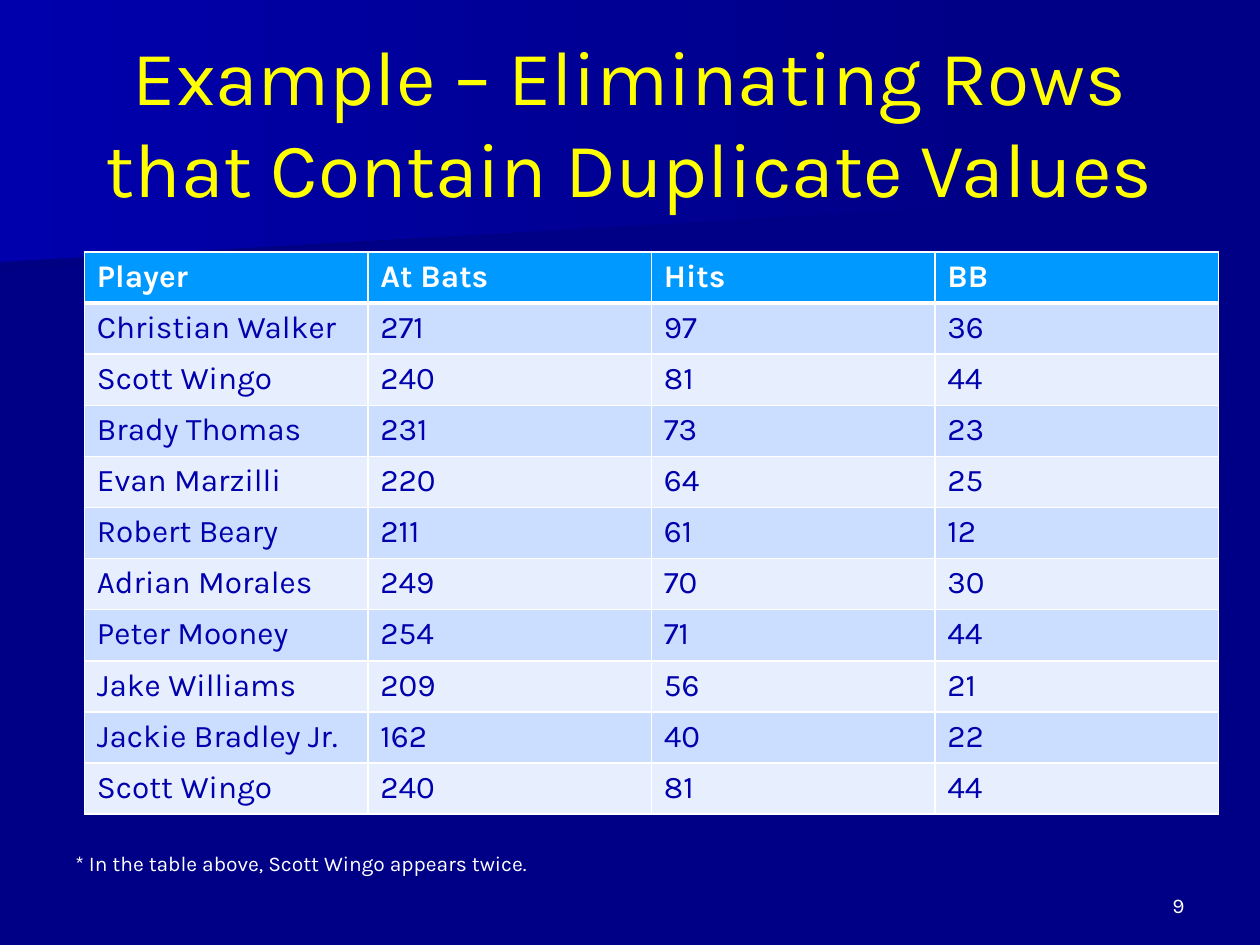
from lxml import etree
from pptx import Presentation
from pptx.dml.color import RGBColor
from pptx.enum.text import MSO_ANCHOR, PP_ALIGN
from pptx.oxml.ns import qn
from pptx.util import Cm, Pt

LEFT, CENTER, RIGHT = PP_ALIGN.LEFT, PP_ALIGN.CENTER, PP_ALIGN.RIGHT
MIDDLE, BOTTOM = MSO_ANCHOR.MIDDLE, MSO_ANCHOR.BOTTOM

FONT = "Karla"
COLORS = {
    "background": "000086",
    "shade": "000083",
    "glow": "0000AC",
    "title": "FFFF00",
    "white": "FFFFFF",
    "header": "0099FF",
    "odd_row": "CBDEFF",
    "even_row": "E7EFFF",
    "body": "0000AC",
}

PLAYERS = [
    ("Player", "At Bats", "Hits", "BB"),
    ("Christian Walker", 271, 97, 36),
    ("Scott Wingo", 240, 81, 44),
    ("Brady Thomas", 231, 73, 23),
    ("Evan Marzilli", 220, 64, 25),
    ("Robert Beary", 211, 61, 12),
    ("Adrian Morales", 249, 70, 30),
    ("Peter Mooney", 254, 71, 44),
    ("Jake Williams", 209, 56, 21),
    ("Jackie Bradley Jr.", 162, 40, 22),
    ("Scott Wingo", 240, 81, 44),
]


def rgb(name):
    return RGBColor.from_string(COLORS[name])


def style_font(para, size, color, bold=False):
    para.font.name = FONT
    para.font.size = Pt(size)
    para.font.bold = bold
    para.font.color.rgb = rgb(color)


def add_text(page, box, text, size, color, align, anchor):
    frame = page.shapes.add_textbox(*map(Cm, box)).text_frame
    frame.word_wrap = True
    frame.vertical_anchor = anchor
    para = frame.paragraphs[0]
    para.text = text
    para.alignment = align
    style_font(para, size, color)


def add_band(page, box, left_drop, right_drop, start_color):
    """Sloping band: the drops are the lower ends of its sides, from the box top."""
    left, top, width, _ = box
    corners = [(left, top), (left + width, top),
               (left + width, top + right_drop), (left, top + left_drop)]
    points = [(Cm(x), Cm(y)) for x, y in corners]
    builder = page.shapes.build_freeform(*points[0])
    builder.add_line_segments(points[1:], close=True)
    band = builder.convert_to_shape()
    band.shadow.inherit = False
    band.line.fill.background()
    band.fill.gradient()
    band.fill.gradient_angle = 0
    for stop, color, position in zip(band.fill.gradient_stops,
                                     (start_color, "background"), (0, 1)):
        stop.color.rgb = rgb(color)
        stop.position = position


def add_backdrop(page):
    page.background.fill.solid()
    page.background.fill.fore_color.rgb = rgb("background")
    add_band(page, (0, 2.57, 19.79, 2.92), 2.92, 1.32, "shade")
    add_band(page, (0, 0, 20.12, 5.28), 5.28, 4.11, "glow")


def set_borders(cell, widths):
    properties = cell._tc.get_or_add_tcPr()
    for side, width in widths.items():
        line = etree.SubElement(properties, qn(f"a:ln{side}"), w=str(Pt(width)))
        fill = etree.SubElement(line, qn("a:solidFill"))
        etree.SubElement(fill, qn("a:srgbClr"), val=COLORS["white"])


def add_player_table(page, box, rows):
    left, top, width, height = box
    columns = len(rows[0])
    table = page.shapes.add_table(len(rows), columns, *map(Cm, box)).table
    for column in table.columns:
        column.width = Cm(width / columns)
    for index, values in enumerate(rows):
        table.rows[index].height = Cm(height / len(rows))
        is_header = index == 0
        fill = "header" if is_header else "odd_row" if index % 2 else "even_row"
        # A thick rule parts the header from the body
        widths = {"L": 1, "R": 1, "T": 3 if index == 1 else 1,
                  "B": 3 if is_header else 1}
        for cell, value in zip(table.rows[index].cells, values):
            set_borders(cell, widths)
            cell.fill.solid()
            cell.fill.fore_color.rgb = rgb(fill)
            para = cell.text_frame.paragraphs[0]
            para.text = str(value)
            style_font(para, 18, "white" if is_header else "body", is_header)


def main():
    deck = Presentation()
    deck.slide_width, deck.slide_height = Cm(25.4), Cm(19.05)
    page = deck.slides.add_slide(deck.slide_layouts[6])

    add_backdrop(page)
    add_text(page, (1.27, 0.84, 22.86, 3.18),
             "Example – Eliminating Rows that Contain Duplicate Values",
             44, "title", CENTER, MIDDLE)
    add_player_table(page, (1.7, 5.08, 22.86, 11.33), PLAYERS)

    # Page number and footnote
    add_text(page, (18.21, 17.35, 5.92, 1.27), "9", 12, "white", RIGHT, BOTTOM)
    add_text(page, (1.27, 16.93, 12.07, 0.85),
             "* In the table above, Scott Wingo appears twice.",
             12, "white", LEFT, BOTTOM)

    deck.save("out.pptx")


if __name__ == "__main__":
    main()
